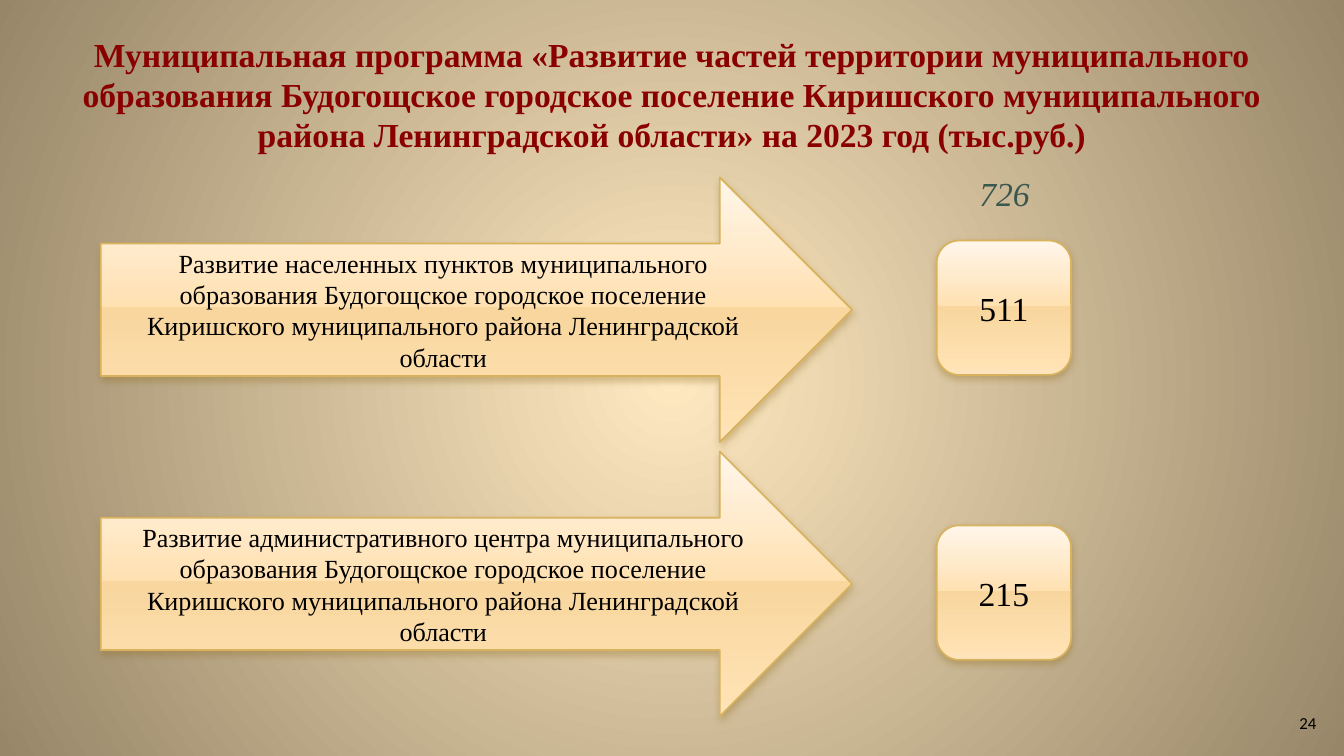
"""Builds the slide on the municipal territory programme for 2023."""
from lxml import etree
from pptx import Presentation
from pptx import util as u
from pptx.dml.color import RGBColor
from pptx.enum import shapes, text
from pptx.oxml import parse_xml
from pptx.oxml.ns import nsdecls, qn

TITLE = ("Муниципальная программа «Развитие частей территории муниципального "
         "образования Будогощское городское поселение Киришского муниципального "
         "района Ленинградской области» на 2023 год (тыс.руб.)")
TAIL = ("муниципального образования Будогощское городское поселение "
        "Киришского муниципального района Ленинградской области")
ROWS = [
    ("Развитие населенных пунктов " + TAIL, 1.32, "511", 1.79),
    ("Развитие административного центра " + TAIL, 3.36, "215", 3.91),
]
TOTAL, PAGE = "726", "24"
SERIF = "Times New Roman"
GLOW = [(0, "FFE9C1"), (100, "978668")]
GOLD = [(0, "FFF6EA"), (49, "FFE1B2"), (49, "F8D69E"), (92, "FFE1B2"), (100, "FEE5BF")]
DOWN = f'<a:lin {nsdecls("a")} ang="5400000" scaled="0"/>'
ROUND = (f'<a:path {nsdecls("a")} path="circle">'
         '<a:fillToRect l="50000" t="50000" r="50000" b="50000"/></a:path>')
SHADE = (f'<a:effectLst {nsdecls("a")}><a:outerShdw blurRad="50800" dist="25400" '
         'dir="5400000" rotWithShape="0"><a:srgbClr val="927124">'
         '<a:alpha val="38000"/></a:srgbClr></a:outerShdw></a:effectLst>')


def color(code):
    return RGBColor.from_string(code)


def blend(fill, root, stops, way):
    fill.gradient()
    grad = next(root.iter(qn("a:gradFill")))
    for child in list(grad):
        grad.remove(child)
    group = etree.SubElement(grad, qn("a:gsLst"))
    for pos, code in stops:
        stop = etree.SubElement(group, qn("a:gs"), pos=str(pos * 1000))
        etree.SubElement(stop, qn("a:srgbClr"), val=code)
    grad.append(parse_xml(way))


def write(shape, words, size, code="000000", font=SERIF, bold=False,
          slant=False, align=text.PP_ALIGN.CENTER, wrap=True):
    frame = shape.text_frame
    frame.word_wrap = wrap
    para = frame.paragraphs[0]
    para.alignment = align
    run = para.add_run()
    run.text = words
    face = run.font
    face.name, face.size = font, u.Pt(size)
    face.bold, face.italic = bold, slant
    face.color.rgb = color(code)


def panel(slide, kind, box, words, size):
    shape = slide.shapes.add_shape(kind, *map(u.Inches, box))
    blend(shape.fill, shape._element.spPr, GOLD, DOWN)
    shape.line.color.rgb = color("D8B25C")
    shape.line.width = u.Pt(0.9)
    shape._element.spPr.append(parse_xml(SHADE))
    shape.text_frame.vertical_anchor = text.MSO_ANCHOR.MIDDLE
    write(shape, words, size)


def label(slide, box, words, size, **style):
    shape = slide.shapes.add_textbox(*map(u.Inches, box))
    shape.text_frame.auto_size = text.MSO_AUTO_SIZE.SHAPE_TO_FIT_TEXT
    write(shape, words, size, **style)


def main():
    deck = Presentation()
    deck.slide_width = u.Inches(10)
    deck.slide_height = deck.slide_width * 9 // 16
    slide = deck.slides.add_slide(deck.slide_layouts[5])
    blend(slide.background.fill, slide._element, GLOW, ROUND)

    title = slide.shapes.title
    title.left, title.top, title.width, title.height = map(u.Inches, (0.5, 0.23, 9, 0.94))
    title.text_frame.vertical_anchor = text.MSO_ANCHOR.MIDDLE
    title.text_frame.auto_size = text.MSO_AUTO_SIZE.NONE
    write(title, TITLE, 18, "8A0000", bold=True)

    kinds = shapes.MSO_SHAPE
    for words, top, _, _ in ROWS:
        panel(slide, kinds.RIGHT_ARROW, (0.75, top, 5.59, 1.97), words, 14)
    for _, _, cost, top in ROWS:
        panel(slide, kinds.ROUNDED_RECTANGLE, (6.97, top, 1, 1), cost, 18)

    label(slide, (6.65, 1.24, 1.65, 0.4), TOTAL, 18, code="3A5750", slant=True)
    label(slide, (9.57, 5.25, 0.33, 0.25), PAGE, 9, font="Calibri",
          align=text.PP_ALIGN.LEFT, wrap=False)
    deck.save("out.pptx")


if __name__ == "__main__":
    main()
